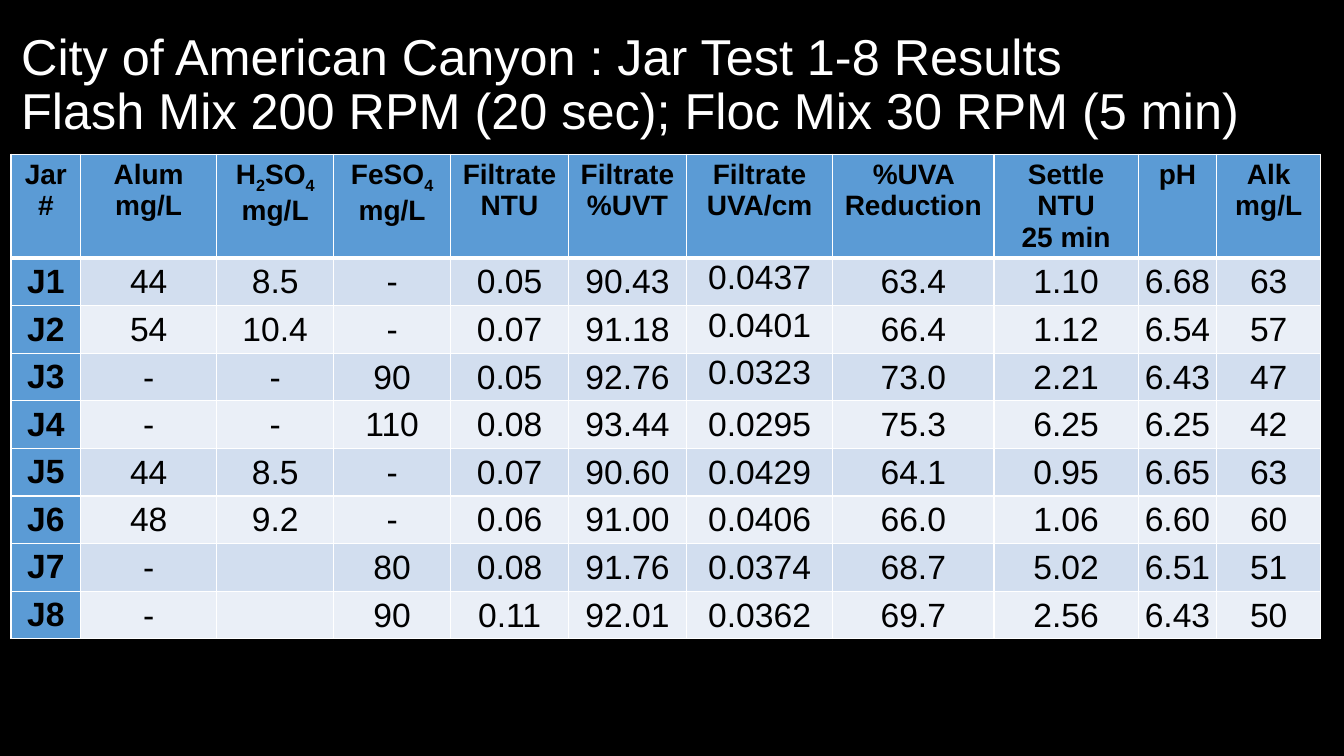
from lxml.etree import SubElement
from pptx import Presentation
from pptx.dml.color import RGBColor
from pptx.enum.text import MSO_ANCHOR as Anchor, MSO_AUTO_SIZE as AutoSize, PP_ALIGN as Align
from pptx.oxml.ns import qn
from pptx.util import Inches, Pt

BLACK, WHITE, BLUE = "000000", "FFFFFF", "5B9BD5"
BANDS = ["D2DEEF", "EAEFF7"]

# Each header lists its lines; underscores separate normal and subscript text
HEADERS = [
    ["Jar", "#"], ["Alum", "mg/L"], ["H_2_SO_4", "mg/L"], ["FeSO_4", "mg/L"],
    ["Filtrate", "NTU"], ["Filtrate", "%UVT"], ["Filtrate", "UVA/cm"],
    ["%UVA Reduction"], ["Settle", "NTU", "25 min"], ["pH"], ["Alk", "mg/L"],
]
RESULTS = [
    ["J1", "44", "8.5", "-", "0.05", "90.43", "0.0437", "63.4", "1.10", "6.68", "63"],
    ["J2", "54", "10.4", "-", "0.07", "91.18", "0.0401", "66.4", "1.12", "6.54", "57"],
    ["J3", "-", "-", "90", "0.05", "92.76", "0.0323", "73.0", "2.21", "6.43", "47"],
    ["J4", "-", "-", "110", "0.08", "93.44", "0.0295", "75.3", "6.25", "6.25", "42"],
    ["J5", "44", "8.5", "-", "0.07", "90.60", "0.0429", "64.1", "0.95", "6.65", "63"],
    ["J6", "48", "9.2", "-", "0.06", "91.00", "0.0406", "66.0", "1.06", "6.60", "60"],
    ["J7", "-", "", "80", "0.08", "91.76", "0.0374", "68.7", "5.02", "6.51", "51"],
    ["J8", "-", "", "90", "0.11", "92.01", "0.0362", "69.7", "2.56", "6.43", "50"],
]
COLUMN_WIDTHS = [0.69, 1.35, 1.16, 1.16, 1.17, 1.17, 1.45, 1.6, 1.43, 0.78, 1.03]
HEADER_HEIGHT, ROW_HEIGHT = 1.03, 0.47
UVA_COLUMN = 6


def color(hex_value):
    return RGBColor.from_string(hex_value)


def add_run(paragraph, text, size, hex_value, bold=False):
    run = paragraph.add_run()
    run.text = text
    run.font.name = "Arial"
    run.font.size = Pt(size)
    run.font.bold = bold
    run.font.color.rgb = color(hex_value)
    return run


presentation = Presentation()
presentation.slide_width = Inches(13.33)
presentation.slide_height = Inches(7.5)
slide = presentation.slides.add_slide(presentation.slide_layouts[5])
slide.background.fill.solid()
slide.background.fill.fore_color.rgb = color(BLACK)

# Title
title = slide.shapes.title
title.left, title.top = Inches(0.11), Inches(0.13)
title.width, title.height = Inches(12.8), Inches(1.45)
title.text_frame.auto_size = AutoSize.NONE
title.text_frame.vertical_anchor = Anchor.MIDDLE
paragraph = title.text_frame.paragraphs[0]
paragraph.alignment = Align.LEFT
paragraph.line_spacing = 0.9
add_run(paragraph, "City of American Canyon : Jar Test 1-8 Results", 36, WHITE)
paragraph.add_line_break()
add_run(paragraph, "Flash Mix 200 RPM (20 sec); Floc Mix 30 RPM (5 min)", 36, WHITE)

# Table grid
table_height = HEADER_HEIGHT + ROW_HEIGHT * len(RESULTS)
table = slide.shapes.add_table(
    len(RESULTS) + 1, len(HEADERS), Inches(0.11), Inches(1.53),
    Inches(sum(COLUMN_WIDTHS)), Inches(table_height)).table
for column, width in zip(table.columns, COLUMN_WIDTHS):
    column.width = Inches(width)
for row_index, row in enumerate(table.rows):
    row.height = Inches(ROW_HEIGHT if row_index else HEADER_HEIGHT)

# Table cells
rows = [HEADERS] + [[[value] for value in result] for result in RESULTS]
for row_index, row in enumerate(rows):
    for column_index, lines in enumerate(row):
        cell = table.cell(row_index, column_index)
        is_header = row_index == 0
        is_label = is_header or column_index == 0

        # White borders, thicker under the header
        properties = cell._tc.get_or_add_tcPr()
        for side in ("L", "R", "T", "B"):
            thick = (row_index, side) in [(0, "B"), (1, "T")]
            border = SubElement(properties, qn(f"a:ln{side}"), w=str(Pt(3 if thick else 1)))
            fill = SubElement(border, qn("a:solidFill"))
            SubElement(fill, qn("a:srgbClr"), val=WHITE)
        cell.fill.solid()
        cell.fill.fore_color.rgb = color(BLUE if is_label else BANDS[(row_index - 1) % 2])

        # Values are centred, except the first three UVA/cm results at the top
        if not is_label:
            cell.margin_left = cell.margin_right = cell.margin_top = Inches(0.01)
            cell.margin_bottom = 0
            at_top = column_index == UVA_COLUMN and row_index <= 3
            cell.vertical_anchor = Anchor.TOP if at_top else Anchor.MIDDLE

        for line_index, line in enumerate(lines):
            frame = cell.text_frame
            paragraph = frame.add_paragraph() if line_index else frame.paragraphs[0]
            paragraph.alignment = Align.CENTER
            if not line:
                continue
            for part_index, part in enumerate(line.split("_")):
                if not part:
                    continue
                run = add_run(paragraph, part, 20 if is_header else 24, BLACK, is_label)
                if part_index % 2:
                    run._r.get_or_add_rPr().set("baseline", "-25000")

presentation.save("out.pptx")
